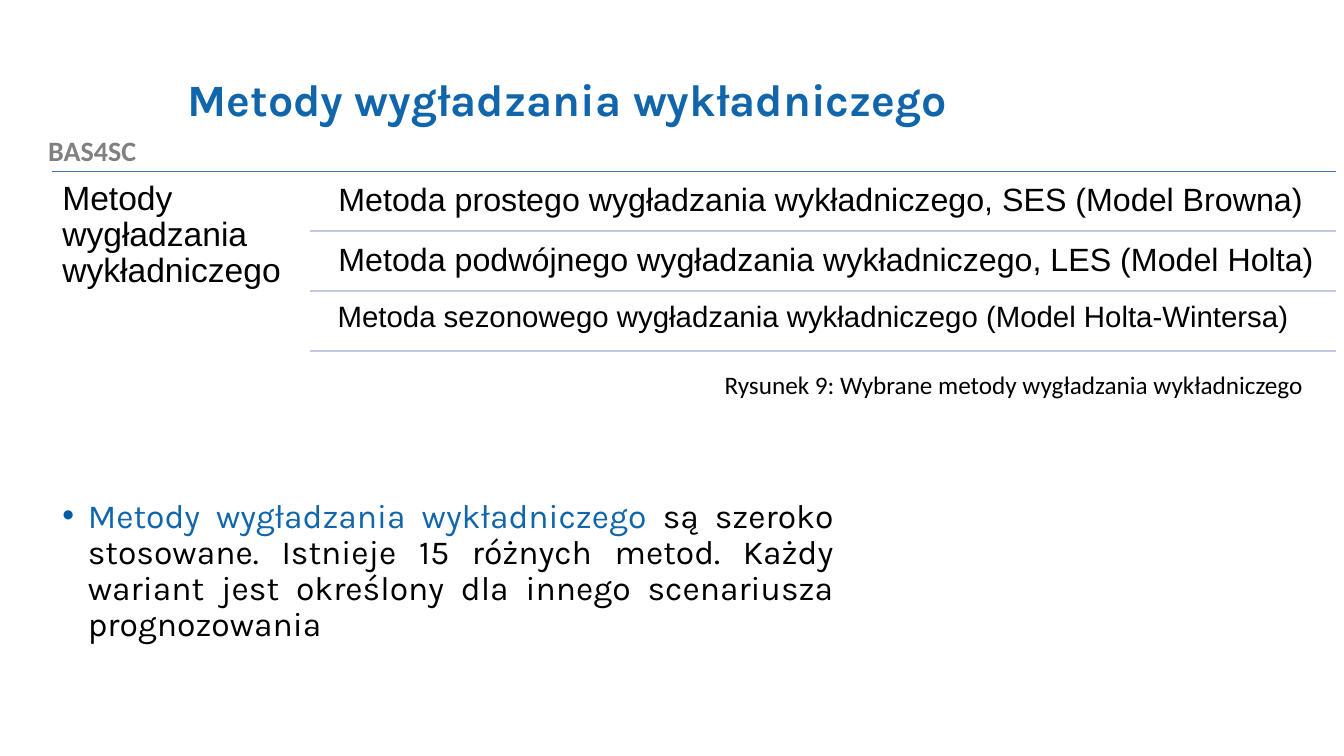
"""Build the slide on exponential smoothing methods."""
from lxml import etree
from pptx import Presentation
from pptx.dml.color import RGBColor
from pptx.enum import shapes, text
from pptx.oxml import ns
from pptx.util import Cm, Pt

BLUE, BLACK, GREY = "1065AB", "000000", "808080"
BULLET, TOP_RULE, ROW_RULE = "015BA6", "4472C4", "C1C9E4"

TITLE = "Metody wygładzania wykładniczego"
PROJECT = "BAS4SC"
METHODS = [
    ("Metoda prostego wygładzania wykładniczego, SES (Model Browna)", 23),
    ("Metoda podwójnego wygładzania wykładniczego, LES (Model Holta)", 23),
    ("Metoda sezonowego wygładzania wykładniczego (Model Holta-Wintersa)", 21),
]
CAPTION = "Rysunek 9: Wybrane metody wygładzania wykładniczego"
BODY = [
    ("Metody wygładzania wykładniczego ", BLUE),
    ("są szeroko stosowane. Istnieje 15 różnych metod. Każdy wariant jest "
     "określony dla innego scenariusza prognozowania", BLACK),
]

LEFT, RIGHT, TOP = 1.32, 33.68, 4.32
ROW_LEFT, ROW_RULE_LEFT = 8.28, 7.8
ROW_TOP, ROW_HEIGHT, ROW_PITCH = 4.37, 1.45, 1.51


def color(value):
    return RGBColor.from_string(value)


def style(font, name, size, value, bold=False):
    font.name, font.size, font.bold = name, Pt(size), bold
    font.color.rgb = color(value)


def place(shape, left, top, width, height):
    shape.left, shape.top = Cm(left), Cm(top)
    shape.width, shape.height = Cm(width), Cm(height)


def add_label(slide, box, content, name, size, value=BLACK, bold=False,
              spacing=None, inset=None):
    shape = slide.shapes.add_textbox(*map(Cm, box))
    frame = shape.text_frame
    frame.word_wrap = True
    frame.text = content
    if inset:
        frame.margin_left = frame.margin_right = Cm(inset)
        frame.margin_top = frame.margin_bottom = Cm(inset)
    paragraph = frame.paragraphs[0]
    paragraph.line_spacing = spacing
    style(paragraph.runs[0].font, name, size, value, bold)
    return paragraph


def add_rule(slide, left, y, value):
    line = slide.shapes.add_connector(
        shapes.MSO_CONNECTOR.STRAIGHT, Cm(left), Cm(y), Cm(RIGHT), Cm(y))
    line.line.color.rgb = color(value)
    line.line.width = Pt(1)
    etree.SubElement(line._element.spPr, ns.qn("a:effectLst"))


def add_bullet(paragraph):
    properties = paragraph._p.get_or_add_pPr()
    properties.set("marL", str(Cm(0.64)))
    properties.set("indent", str(-Cm(0.64)))
    bullet_color = etree.SubElement(properties, ns.qn("a:buClr"))
    etree.SubElement(bullet_color, ns.qn("a:srgbClr"), val=BULLET)
    etree.SubElement(properties, ns.qn("a:buFont"), typeface="Arial")
    etree.SubElement(properties, ns.qn("a:buChar"), char="•")


def fill_title(shape):
    place(shape, 4.47, 1.02, 27.08, 3.1)
    frame = shape.text_frame
    frame.text = TITLE
    frame.vertical_anchor = text.MSO_ANCHOR.MIDDLE
    paragraph = frame.paragraphs[0]
    paragraph.alignment = text.PP_ALIGN.LEFT
    paragraph.line_spacing = 0.9
    style(paragraph.runs[0].font, "Karla", 32, BLUE, True)


def fill_body(shape):
    place(shape, LEFT, 12.45, 19.94, 5.59)
    paragraph = shape.text_frame.paragraphs[0]
    add_bullet(paragraph)
    paragraph.alignment = text.PP_ALIGN.JUSTIFY
    paragraph.line_spacing = 0.9
    paragraph.space_before = Pt(0)
    for content, value in BODY:
        run = paragraph.add_run()
        run.text = content
        style(run.font, "Karla", 24, value)


def add_methods(slide):
    add_rule(slide, LEFT, TOP, TOP_RULE)
    add_label(slide, (LEFT, TOP, 6.48, 4.6), TITLE, "Arial", 24,
              spacing=0.9, inset=0.25)
    for index, (method, size) in enumerate(METHODS):
        top = ROW_TOP + index * ROW_PITCH
        add_label(slide, (ROW_LEFT, top, 25.4, ROW_HEIGHT), method, "Arial",
                  size, spacing=0.9, inset=size / 92)
        add_rule(slide, ROW_RULE_LEFT, top + ROW_HEIGHT, ROW_RULE)


def main():
    presentation = Presentation()
    presentation.slide_width, presentation.slide_height = Cm(33.87), Cm(19.05)
    slide = presentation.slides.add_slide(presentation.slide_layouts[1])
    project = add_label(slide, (0, 3.25, 4.65, 1.12), PROJECT, "Calibri", 20,
                        GREY, True)
    project.alignment = text.PP_ALIGN.CENTER
    fill_title(slide.shapes.title)
    fill_body(slide.placeholders[1])
    add_methods(slide)
    add_label(slide, (18.01, 9.17, 16.13, 1.02), CAPTION, "Calibri", 18)
    presentation.save("out.pptx")


if __name__ == "__main__":
    main()
